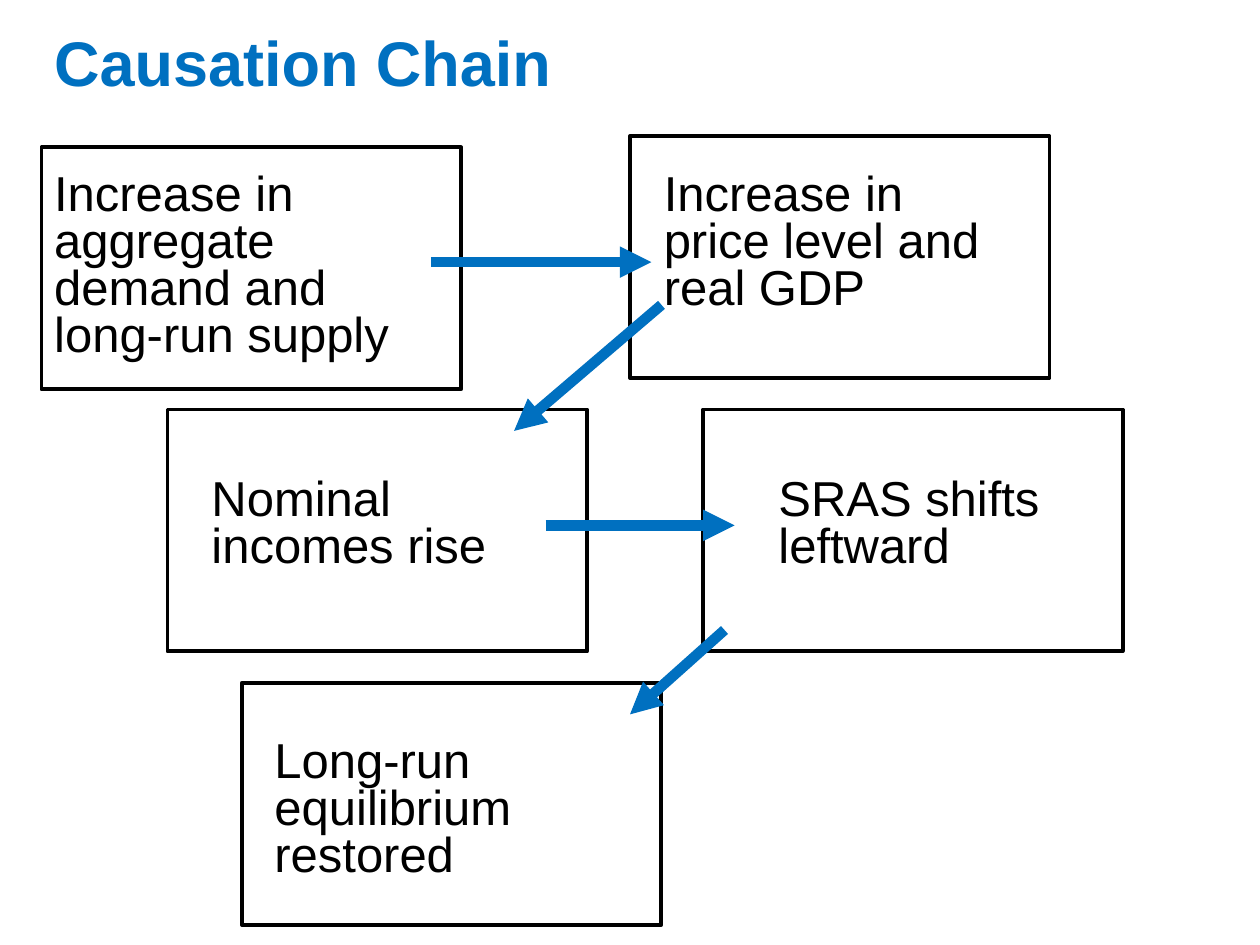
from dataclasses import dataclass

from lxml.etree import SubElement
from pptx import Presentation
from pptx.dml.color import RGBColor as Rgb
from pptx.enum.shapes import MSO_CONNECTOR as Conn, MSO_SHAPE as Shape
from pptx.enum.text import MSO_ANCHOR as Anchor, MSO_AUTO_SIZE as Fit, PP_ALIGN as Align
from pptx.oxml.ns import qn
from pptx.util import Inches, Pt


@dataclass(frozen=True)
class Theme:
    font: str = "Arial"
    blue: Rgb = Rgb(0x00, 0x70, 0xC0)
    black: Rgb = Rgb(0x00, 0x00, 0x00)
    head: Pt = Pt(36)
    body: Pt = Pt(28)
    edge: Pt = Pt(2.25)
    arrow: Pt = Pt(6)


class Deck:
    def __init__(self, theme):
        self.theme = theme
        self.file = Presentation()
        self.file.slide_width, self.file.slide_height = Inches(10), Inches(7.5)
        self.slide = self.file.slides.add_slide(self.file.slide_layouts[1])
        self.shapes = self.slide.shapes

    def fill_text(self, shape, area, text, size, color, bold=False):
        shape.left, shape.top, shape.width, shape.height = map(Inches, area)
        frame = shape.text_frame
        frame.text = text
        frame.word_wrap = True
        frame.auto_size = Fit.SHAPE_TO_FIT_TEXT
        para = frame.paragraphs[0]
        para.alignment = Align.LEFT
        para.line_spacing = 0.8
        font = para.font
        font.name, font.size, font.bold = self.theme.font, size, bold
        font.color.rgb = color
        return para

    def title(self, text, area):
        shape = self.shapes.title
        self.fill_text(shape, area, text, self.theme.head, self.theme.blue, True)
        shape.text_frame.vertical_anchor = Anchor.MIDDLE

    def label(self, text, area, shape=None):
        """Put a step's label in the given placeholder or a new text box."""
        shape = shape or self.shapes.add_textbox(0, 0, 0, 0)
        para = self.fill_text(shape, area, text, self.theme.body, self.theme.black)
        para.space_before = Pt(5.6)
        return para

    def lead(self, text, area):
        """Put the first step in the body placeholder, without its bullet."""
        para = self.label(text, area, self.slide.placeholders[1])
        props = para._p.get_or_add_pPr()
        props.set("marL", "0")
        props.set("indent", "0")
        SubElement(props, qn("a:buNone"))
        # The schema wants the bullet ahead of the default font.
        props.append(props.find(qn("a:defRPr")))

    def box(self, left, top):
        box = self.shapes.add_shape(
            Shape.RECTANGLE, Inches(left), Inches(top), Inches(3.33), Inches(1.92))
        box.shadow.inherit = False
        box.fill.background()
        box.line.color.rgb = self.theme.black
        box.line.width = self.theme.edge

    def arrow(self, start, end):
        link = self.shapes.add_connector(Conn.STRAIGHT, *map(Inches, start + end))
        link.line.color.rgb = self.theme.blue
        link.line.width = self.theme.arrow
        SubElement(link.line._get_or_add_ln(), qn("a:tailEnd"), type="triangle")
        SubElement(link._element.spPr, qn("a:effectLst"))


# Each step: box corner, label, label area
STEPS = [
    ((0.33, 1.17), "Increase in aggregate demand and long-run supply",
     (0.33, 1.33, 3.33, 1.59)),
    ((5, 1.08), "Increase in price level and real GDP", (5.17, 1.33, 3, 1.22)),
    ((1.33, 3.25), "Nominal incomes rise", (1.58, 3.75, 2.92, 0.85)),
    ((5.58, 3.25), "SRAS shifts leftward", (6.08, 3.75, 2.33, 0.85)),
    ((1.92, 5.42), "Long-run equilibrium restored", (2.08, 5.83, 2.92, 1.22)),
]
ARROWS = [
    ((3.42, 2.08), (5.17, 2.08)),
    ((5.25, 2.42), (4.08, 3.42)),
    ((4.33, 4.17), (5.83, 4.17)),
    ((5.75, 5), (5, 5.67)),
]


def main():
    deck = Deck(Theme())
    deck.title("Causation Chain", (0.33, 0.25, 8.92, 0.59))
    for step, (corner, text, area) in enumerate(STEPS):
        deck.box(*corner)
        put = deck.label if step else deck.lead
        put(text, area)
    for start, end in ARROWS:
        deck.arrow(start, end)
    deck.file.save("out.pptx")


if __name__ == "__main__":
    main()
